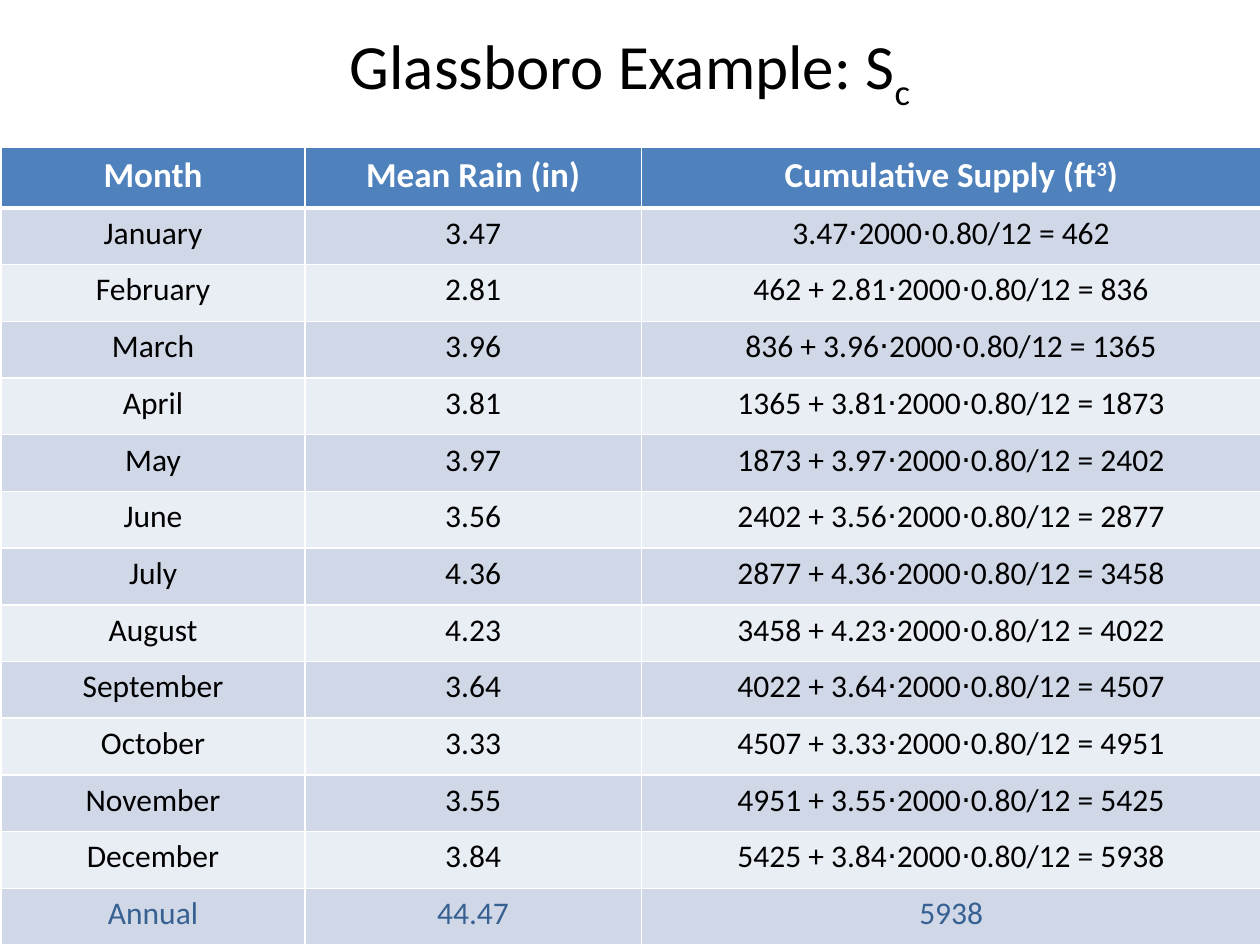
from dataclasses import dataclass

from lxml.etree import SubElement
from pptx import Presentation
from pptx.dml.color import RGBColor
from pptx.enum.text import MSO_ANCHOR, PP_ALIGN
from pptx.oxml.ns import qn
from pptx.util import Inches, Pt


@dataclass(frozen=True)
class Theme:
    font: str = "Calibri"
    title_size: int = 36
    header_size: int = 20
    body_size: int = 18
    text: str = "000000"
    header_text: str = "FFFFFF"
    annual_text: str = "376092"
    header_fill: str = "4F81BD"
    bands: tuple = ("D0D8E8", "E9EDF4")
    border: str = "FFFFFF"
    border_width: int = 1
    header_rule: int = 3


class SlideBuilder:
    def __init__(self, prs, theme):
        self.theme = theme
        self.slide = prs.slides.add_slide(prs.slide_layouts[5])

    def add_text(self, tf, runs, size, color, bold=False):
        """Fill a centred paragraph with (text, baseline percent) runs."""
        p = tf.paragraphs[0]
        p.alignment = PP_ALIGN.CENTER
        p.font.name, p.font.size, p.font.bold = self.theme.font, Pt(size), bold
        p.font.color.rgb = RGBColor.from_string(color)
        for text, baseline in runs:
            r = p.add_run()
            r.text = text
            if baseline:
                r._r.get_or_add_rPr().set("baseline", str(baseline * 1000))

    def title(self, runs, left, top, width, height):
        sp = self.slide.shapes.title
        sp.left, sp.top = Inches(left), Inches(top)
        sp.width, sp.height = Inches(width), Inches(height)
        tf = sp.text_frame
        tf.vertical_anchor = MSO_ANCHOR.MIDDLE
        self.add_text(tf, runs, self.theme.title_size, self.theme.text)

    def borders(self, cell, top, bottom):
        tc_pr = cell._tc.get_or_add_tcPr()
        side = self.theme.border_width
        for tag, width in (("lnL", side), ("lnR", side), ("lnT", top), ("lnB", bottom)):
            ln = SubElement(tc_pr, qn(f"a:{tag}"), w=str(Pt(width)))
            fill = SubElement(ln, qn("a:solidFill"))
            SubElement(fill, qn("a:srgbClr"), val=self.theme.border)

    def table(self, rows, left, top, col_widths, header_height, row_height):
        t = self.theme
        heights = [header_height] + [row_height] * (len(rows) - 1)
        table = self.slide.shapes.add_table(
            len(rows), len(col_widths), Inches(left), Inches(top),
            Inches(sum(col_widths)), Inches(sum(heights))).table
        for column, width in zip(table.columns, col_widths):
            column.width = Inches(width)
        for i, (row, height) in enumerate(zip(rows, heights)):
            table.rows[i].height = Inches(height)
            header, last = i == 0, i == len(rows) - 1
            if header:
                size, color, fill = t.header_size, t.header_text, t.header_fill
            else:
                size, fill = t.body_size, t.bands[(i - 1) % 2]
                color = t.annual_text if last else t.text
            for j, runs in enumerate(row):
                cell = table.cell(i, j)
                # Borders come before the fill in the cell properties
                self.borders(cell, t.header_rule if i == 1 else t.border_width,
                             t.header_rule if header else t.border_width)
                cell.fill.solid()
                cell.fill.fore_color.rgb = RGBColor.from_string(fill)
                self.add_text(cell.text_frame, runs, size, color, header)


# Month, mean rain (in), cumulative supply (ft³)
MONTHS = [
    ("January", "3.47", 462), ("February", "2.81", 836),
    ("March", "3.96", 1365), ("April", "3.81", 1873),
    ("May", "3.97", 2402), ("June", "3.56", 2877),
    ("July", "4.36", 3458), ("August", "4.23", 4022),
    ("September", "3.64", 4507), ("October", "3.33", 4951),
    ("November", "3.55", 5425), ("December", "3.84", 5938),
]


def supply_rows():
    """Each month adds its own supply to the total carried forward."""
    rows = [[[("Month", 0)], [("Mean Rain (in)", 0)],
             [("Cumulative Supply (ft", 0), ("3", 30), (")", 0)]]]
    carried = ""
    for month, rain, total in MONTHS:
        formula = f"{carried}{rain}⋅2000⋅0.80/12 = {total}"
        rows.append([[(text, 0)] for text in (month, rain, formula)])
        carried = f"{total} + "
    rows.append([[(text, 0)] for text in ("Annual", "44.47", str(total))])
    return rows


def main():
    prs = Presentation()
    prs.slide_width, prs.slide_height = Inches(10), Inches(7.5)
    s = SlideBuilder(prs, Theme())

    # Title with subscript
    s.title([("Glassboro Example: S", 0), ("c", -25)], 0.5, 0.02, 9, 1.07)

    # Monthly supply table
    s.table(supply_rows(), 0.01, 1.17, (2.41, 2.67, 4.92),
            header_height=0.48, row_height=0.45)

    prs.save("out.pptx")


if __name__ == "__main__":
    main()
